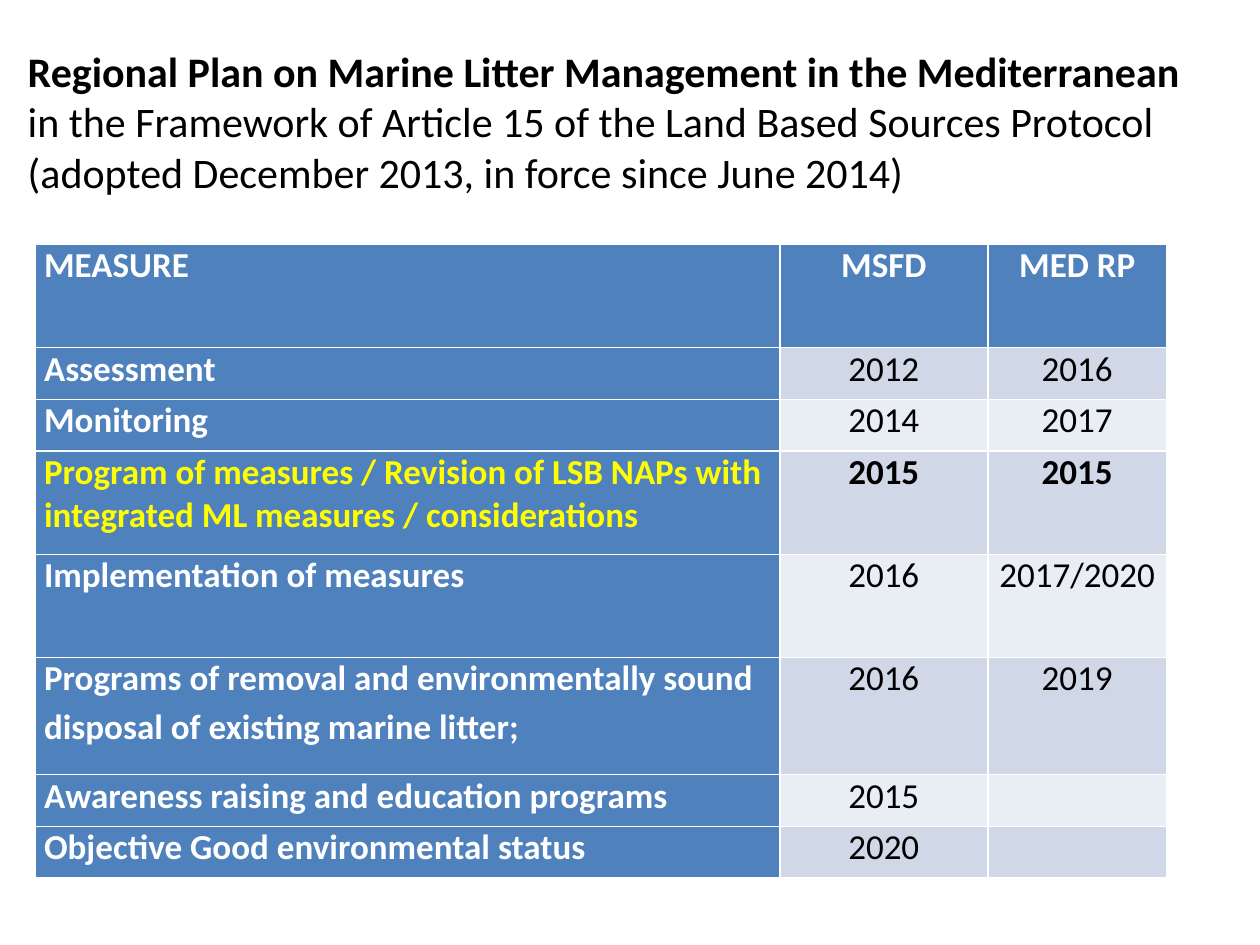
"""Build the slide comparing marine litter measures and their deadlines."""
from pptx import Presentation
from pptx.dml.color import RGBColor
from pptx.enum.text import MSO_ANCHOR, MSO_AUTO_SIZE, PP_ALIGN
from pptx.util import Inches, Pt

WHITE = RGBColor(0xFF, 0xFF, 0xFF)
BLACK = RGBColor(0x00, 0x00, 0x00)
YELLOW = RGBColor(0xFF, 0xFF, 0x00)
BLUE = RGBColor(0x4F, 0x81, 0xBD)
BANDS = (RGBColor(0xE9, 0xED, 0xF4), RGBColor(0xD0, 0xD8, 0xE8))
FONT = "Calibri"

TITLE = [
    ("Regional Plan on Marine Litter Management in the Mediterranean ", True),
    ("in the Framework of Article 15 of the Land Based Sources Protocol "
     "(adopted December 2013, in force since June 2014)", False),
]
ROWS = [
    ("MEASURE", "MSFD", "MED RP"),
    ("Assessment", "2012", "2016"),
    ("Monitoring", "2014", "2017"),
    ("Program of measures / Revision of LSB NAPs with integrated ML measures / considerations",
     "2015", "2015"),
    ("Implementation of measures", "2016", "2017/2020"),
    ("Programs of removal and environmentally sound\ndisposal of existing marine litter;",
     "2016", "2019"),
    ("Awareness raising and education programs", "2015", ""),
    ("Objective Good environmental status", "2020", ""),
]
HIGHLIGHTED_ROW = 3
COLUMN_WIDTHS = (5.91, 1.65, 1.42)
ROW_HEIGHTS = (0.82, 0.41, 0.41, 0.82, 0.82, 0.93, 0.41, 0.41)


def add_title(page):
    title = page.shapes.title
    title.left, title.top = Inches(0.12), Inches(0.29)
    title.width, title.height = Inches(9.38), Inches(1.34)
    frame = title.text_frame
    frame.word_wrap = True
    frame.auto_size = MSO_AUTO_SIZE.NONE
    frame.vertical_anchor = MSO_ANCHOR.MIDDLE
    para = frame.paragraphs[0]
    para.alignment = PP_ALIGN.LEFT
    for text, bold in TITLE:
        span = para.add_run()
        span.text = text
        span.font.name, span.font.size, span.font.bold = FONT, Pt(24), bold
        span.font.color.rgb = BLACK


def fill_cell(cell, text, row, column):
    heading = row == 0 or column == 0
    highlighted = row == HIGHLIGHTED_ROW
    cell.fill.solid()
    cell.fill.fore_color.rgb = BLUE if heading else BANDS[row % 2]
    cell.margin_left = cell.margin_right = Inches(0.07)
    cell.margin_top = cell.margin_bottom = 0
    cell.text = text
    for para in cell.text_frame.paragraphs:
        para.alignment = PP_ALIGN.CENTER if column else PP_ALIGN.LEFT
        para.space_before, para.space_after = Pt(2), Pt(1)
        font = para.font
        font.name, font.size = FONT, Pt(20)
        font.bold = heading or highlighted
        if heading:
            font.color.rgb = YELLOW if highlighted else WHITE
        else:
            font.color.rgb = BLACK


def add_measures(page):
    table = page.shapes.add_table(
        len(ROWS), len(COLUMN_WIDTHS), Inches(0.28), Inches(1.94),
        Inches(sum(COLUMN_WIDTHS)), Inches(sum(ROW_HEIGHTS))).table
    table.first_col = True
    for column, width in zip(table.columns, COLUMN_WIDTHS):
        column.width = Inches(width)
    for row, height in zip(table.rows, ROW_HEIGHTS):
        row.height = Inches(height)
    for row, texts in enumerate(ROWS):
        for column, text in enumerate(texts):
            fill_cell(table.cell(row, column), text, row, column)


def main():
    deck = Presentation()
    deck.slide_width, deck.slide_height = Inches(10), Inches(7.5)
    page = deck.slides.add_slide(deck.slide_layouts.get_by_name("Title Only"))
    add_title(page)
    add_measures(page)
    deck.save("out.pptx")


if __name__ == "__main__":
    main()
